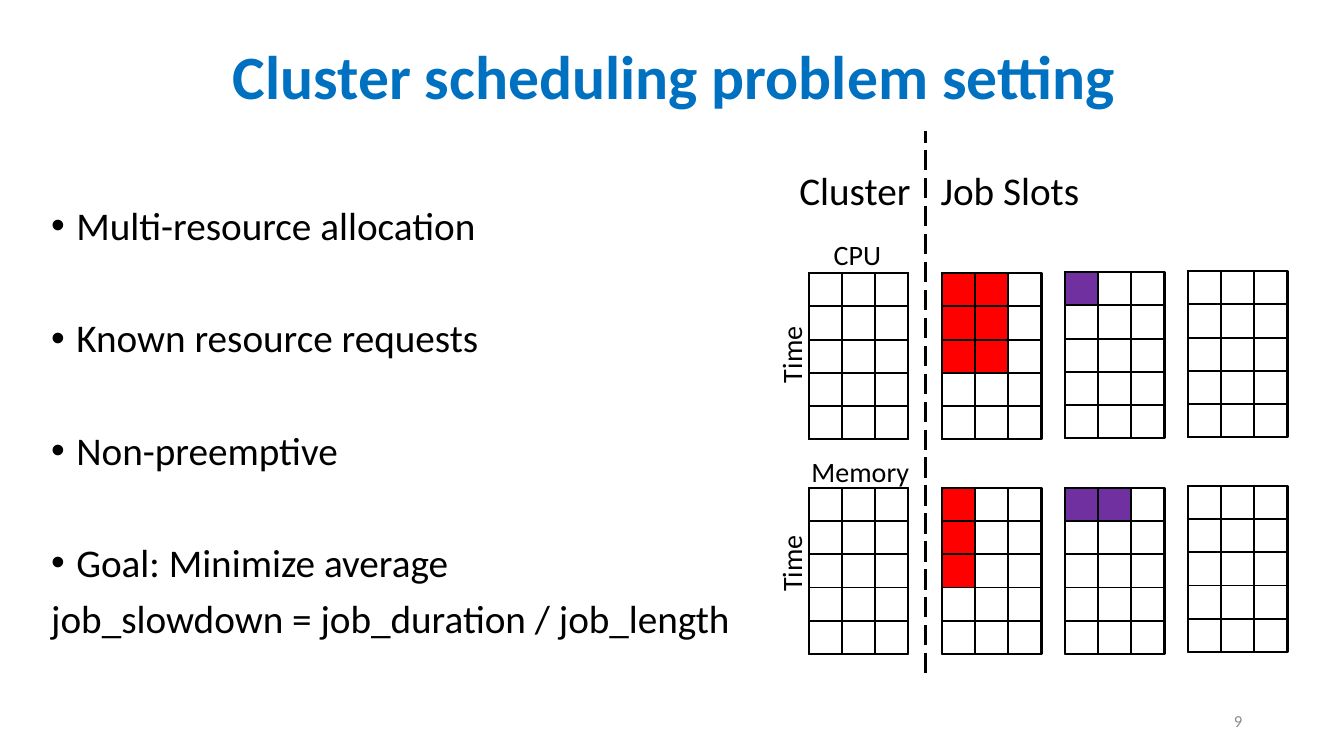
"""Build the slide on the cluster scheduling problem setting."""
from lxml.etree import SubElement
from pptx import Presentation
from pptx.dml.color import RGBColor
from pptx.enum.dml import MSO_LINE
from pptx.enum.shapes import MSO_CONNECTOR, MSO_SHAPE
from pptx.enum.text import MSO_ANCHOR, MSO_AUTO_SIZE, PP_ALIGN
from pptx.oxml.ns import qn
from pptx.util import Pt

PX = 9144
CELL = 33
COLS, ROWS = 3, 5
BLACK, RED, PURPLE = "000000", "FF0000", "7030A0"


def style(p, size, color=BLACK, bold=False, align=PP_ALIGN.LEFT):
    p.alignment = align
    for r in p.runs:
        r.font.name = "Calibri"
        r.font.size = Pt(size)
        r.font.bold = bold
        r.font.color.rgb = RGBColor.from_string(color)


def add_rect(x, y, w, h, fill=None, line=None):
    sp = slide.shapes.add_shape(MSO_SHAPE.RECTANGLE, x * PX, y * PX, w * PX, h * PX)
    sp.shadow.inherit = False
    if fill:
        sp.fill.solid()
        sp.fill.fore_color.rgb = RGBColor.from_string(fill)
    else:
        sp.fill.background()
    if line:
        sp.line.color.rgb = RGBColor.from_string(BLACK)
        sp.line.width = Pt(line)
    else:
        sp.line.fill.background()


prs = Presentation()
prs.slide_width, prs.slide_height = 1333 * PX, 750 * PX
slide = prs.slides.add_slide(prs.slide_layouts[5])

title = slide.shapes.title
title.left, title.top, title.width, title.height = 94 * PX, 6 * PX, 1150 * PX, 145 * PX
tf = title.text_frame
tf.text = "Cluster scheduling problem setting"
tf.auto_size = MSO_AUTO_SIZE.NONE
tf.vertical_anchor = MSO_ANCHOR.MIDDLE
tf.paragraphs[0].line_spacing = 0.9
style(tf.paragraphs[0], 44, "0070C0", True, PP_ALIGN.CENTER)

body = slide.shapes.add_textbox(41 * PX, 200 * PX, 1200 * PX, 476 * PX)
tf = body.text_frame
tf.word_wrap = True
points = [
    "Multi-resource allocation",
    "Known resource requests",
    "Non-preemptive",
    "Goal: Minimize average",
    "job_slowdown = job_duration / job_length",
]
for i, text in enumerate(points):
    p = tf.add_paragraph() if i else tf.paragraphs[0]
    p.text = text
    p.line_spacing = 0.9
    is_formula = i == len(points) - 1
    if i:
        p.space_before = Pt(10 if is_formula else 50)
    if not is_formula:
        pPr = p._p.get_or_add_pPr()
        pPr.set("marL", str(25 * PX))
        pPr.set("indent", str(-25 * PX))
        SubElement(pPr, qn("a:buFont")).set("typeface", "Arial")
        SubElement(pPr, qn("a:buChar")).set("char", "•")
    style(p, 28)

labels = [
    ("Cluster", 783, 160, 139, 57, 28, BLACK, PP_ALIGN.LEFT, 0),
    ("Job Slots", 923, 160, 201, 57, 28, BLACK, PP_ALIGN.LEFT, 0),
    ("CPU", 817, 231, 97, 44, 20, BLACK, PP_ALIGN.LEFT, 0),
    ("Memory", 795, 446, 127, 44, 20, BLACK, PP_ALIGN.LEFT, 0),
    ("Time", 735, 330, 100, 44, 20, BLACK, PP_ALIGN.CENTER, 270),
    ("Time", 735, 537, 100, 44, 20, BLACK, PP_ALIGN.CENTER, 270),
    ("9", 942, 695, 300, 40, 12, "8C8C8C", PP_ALIGN.RIGHT, 0),
]
for text, x, y, w, h, size, color, align, rotation in labels:
    box = slide.shapes.add_textbox(x * PX, y * PX, w * PX, h * PX)
    box.rotation = rotation
    tf = box.text_frame
    tf.word_wrap = True
    tf.vertical_anchor = MSO_ANCHOR.MIDDLE if text == "9" else MSO_ANCHOR.TOP
    tf.text = text
    style(tf.paragraphs[0], size, color, align=align)

grids = [
    (802, 271, None, 0, 0),
    (934, 271, RED, 2, 3),
    (1056, 270, PURPLE, 1, 1),
    (1178, 269, None, 0, 0),
    (802, 484, None, 0, 0),
    (934, 484, RED, 1, 3),
    (1056, 484, PURPLE, 2, 1),
    (1178, 482, None, 0, 0),
]
for x, y, color, used_cols, used_rows in grids:
    for row in range(used_rows):
        for col in range(used_cols):
            add_rect(x + col * CELL, y + row * CELL, CELL, CELL, fill=color)
    add_rect(x, y, COLS * CELL, ROWS * CELL, line=1.5)
    for col in range(0, COLS, 2):
        add_rect(x + col * CELL, y, CELL, ROWS * CELL, line=1.25)
    for row in range(ROWS - 1):
        add_rect(x, y + row * CELL, COLS * CELL, CELL, line=1.25)

divider = slide.shapes.add_connector(
    MSO_CONNECTOR.STRAIGHT, 918 * PX, 668 * PX, 918 * PX, 130 * PX)
divider.line.color.rgb = RGBColor.from_string(BLACK)
divider.line.width = Pt(1.8)
divider.line.dash_style = MSO_LINE.LONG_DASH
SubElement(divider._element.spPr, qn("a:effectLst"))

prs.save("out.pptx")
